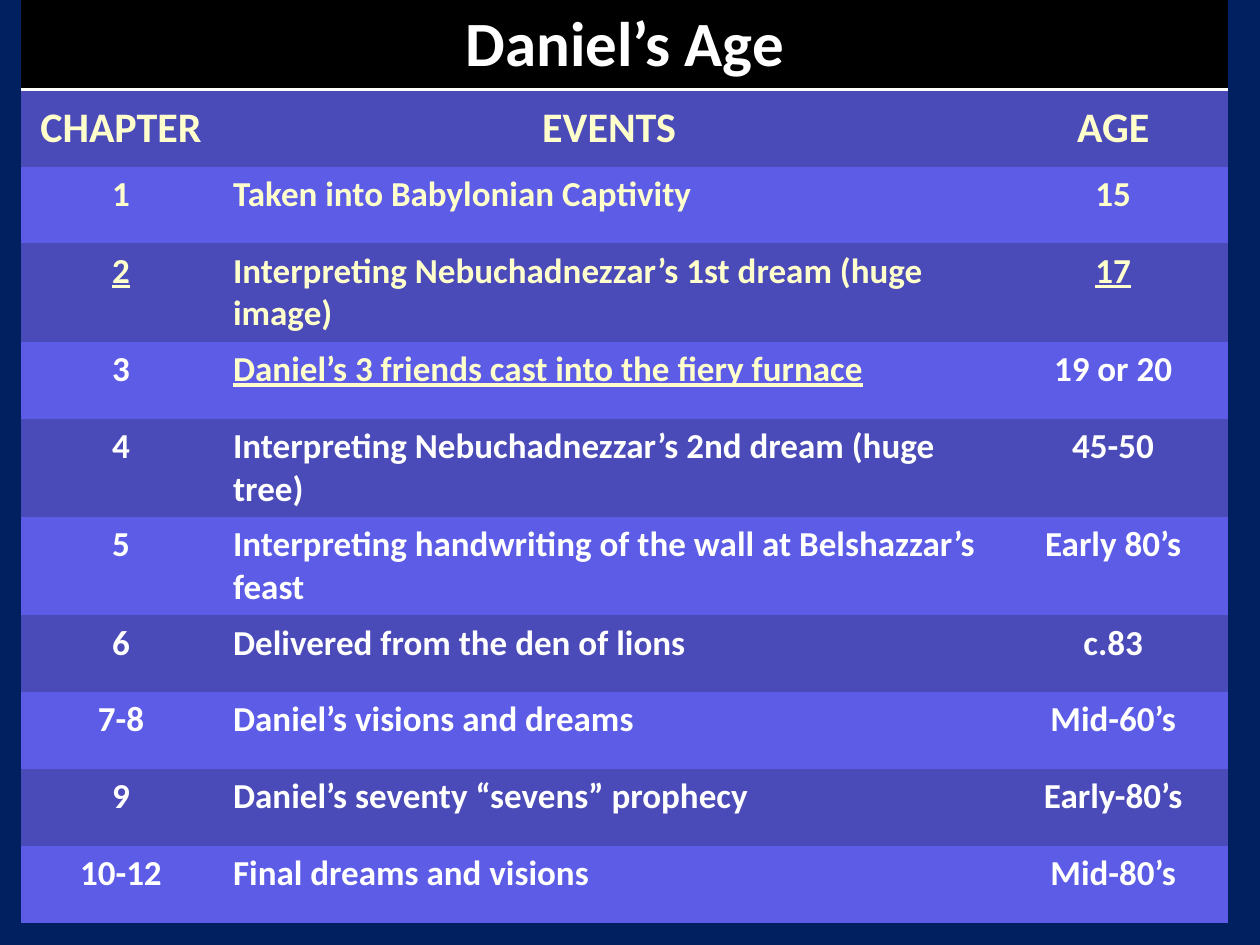
from lxml import etree
from pptx import Presentation
from pptx import util as u
from pptx.dml.color import RGBColor
from pptx.enum import text
from pptx.oxml import ns

NAVY, BLACK, WHITE, CREAM = "002060", "000000", "FFFFFF", "FFFFCC"
DARK, LIGHT = "4A4AB9", "5C5CE7"
NO_GRID = "{2D5ABB26-0587-4C30-8999-92F81FD0307C}"

HEADINGS = ("CHAPTER", "EVENTS", "AGE")
EVENTS = [
    ("1", "Taken into Babylonian Captivity", "15"),
    ("2", "Interpreting Nebuchadnezzar’s 1st dream (huge image)", "17"),
    ("3", "Daniel’s 3 friends cast into the fiery furnace", "19 or 20"),
    ("4", "Interpreting Nebuchadnezzar’s 2nd dream (huge tree)", "45-50"),
    ("5", "Interpreting handwriting of the wall at Belshazzar’s feast", "Early 80’s"),
    ("6", "Delivered from the den of lions", "c.83"),
    ("7-8", "Daniel’s visions and dreams", "Mid-60’s"),
    ("9", "Daniel’s seventy “sevens” prophecy", "Early-80’s"),
    ("10-12", "Final dreams and visions", "Mid-80’s"),
]
CREAM_CELLS = {(row, column) for row in (0, 1) for column in range(3)} | {(2, 1)}
UNDERLINED_CELLS = {(1, 0), (1, 2), (2, 1)}
TALL_EVENTS = {1, 3, 4}
COLUMN_WIDTHS = (1.58, 6.17, 1.83)


def rgb(value):
    """Turn a hex string into a colour."""
    return RGBColor.from_string(value)


class AgeSlide:
    """Hold the style and the current slide."""

    def __init__(self, deck, font="Calibri"):
        """Add a blank page with a navy background."""
        self.font = font
        self.page = deck.slides.add_slide(deck.slide_layouts[6])
        self.page.background.fill.solid()
        self.page.background.fill.fore_color.rgb = rgb(NAVY)

    def table(self, left, top, widths, heights):
        """Add a plain table with the given column widths and row heights."""
        frame = self.page.shapes.add_table(
            len(heights), len(widths), u.Inches(left), u.Inches(top),
            u.Inches(sum(widths)), u.Inches(sum(heights)))
        table = frame.table
        table.first_row = table.horz_banding = False
        next(frame._element.iter(ns.qn("a:tableStyleId"))).text = NO_GRID
        for column, width in zip(table.columns, widths):
            column.width = u.Inches(width)
        for row, height in zip(table.rows, heights):
            row.height = u.Inches(height)
        return table

    def cell(self, cell, words, fill, size=20, color=WHITE, centered=True,
             middle=False, underline=False):
        """Fill a cell and format its words."""
        cell.fill.solid()
        cell.fill.fore_color.rgb = rgb(fill)
        cell.vertical_anchor = text.MSO_ANCHOR.MIDDLE if middle else text.MSO_ANCHOR.TOP
        cell.text_frame.text = words
        para = cell.text_frame.paragraphs[0]
        para.alignment = text.PP_ALIGN.CENTER if centered else text.PP_ALIGN.LEFT
        for span in para.runs:
            span.font.name = self.font
            span.font.size = u.Pt(size)
            span.font.bold = True
            span.font.underline = underline
            span.font.color.rgb = rgb(color)

    def bottom_border(self, cell, color, width):
        """Draw a line along the bottom of a cell."""
        line = etree.Element(ns.qn("a:lnB"), w=str(u.Pt(width)))
        solid = etree.SubElement(line, ns.qn("a:solidFill"))
        etree.SubElement(solid, ns.qn("a:srgbClr"), val=color)
        cell._tc.get_or_add_tcPr().insert(0, line)


def main():
    """Build the table of Daniel's age."""
    deck = Presentation()
    deck.slide_width, deck.slide_height = u.Inches(10), u.Inches(7.5)
    slide = AgeSlide(deck)
    heights = [0.7, 0.61] + [0.78 if row in TALL_EVENTS else 0.61 for row in range(len(EVENTS))]
    table = slide.table(0.17, 0, COLUMN_WIDTHS, heights)

    title = table.cell(0, 0)
    title.merge(table.cell(0, 2))
    slide.cell(title, "Daniel’s Age", BLACK, size=36)
    for column, heading in enumerate(HEADINGS):
        slide.bottom_border(table.cell(0, column), WHITE, 2)
        slide.cell(table.cell(1, column), heading, DARK, size=24, color=CREAM, middle=True)

    for row, event in enumerate(EVENTS):
        for column, words in enumerate(event):
            slide.cell(
                table.cell(row + 2, column), words, DARK if row % 2 else LIGHT,
                color=CREAM if (row, column) in CREAM_CELLS else WHITE,
                centered=column != 1, underline=(row, column) in UNDERLINED_CELLS)
    deck.save("out.pptx")


if __name__ == "__main__":
    main()
